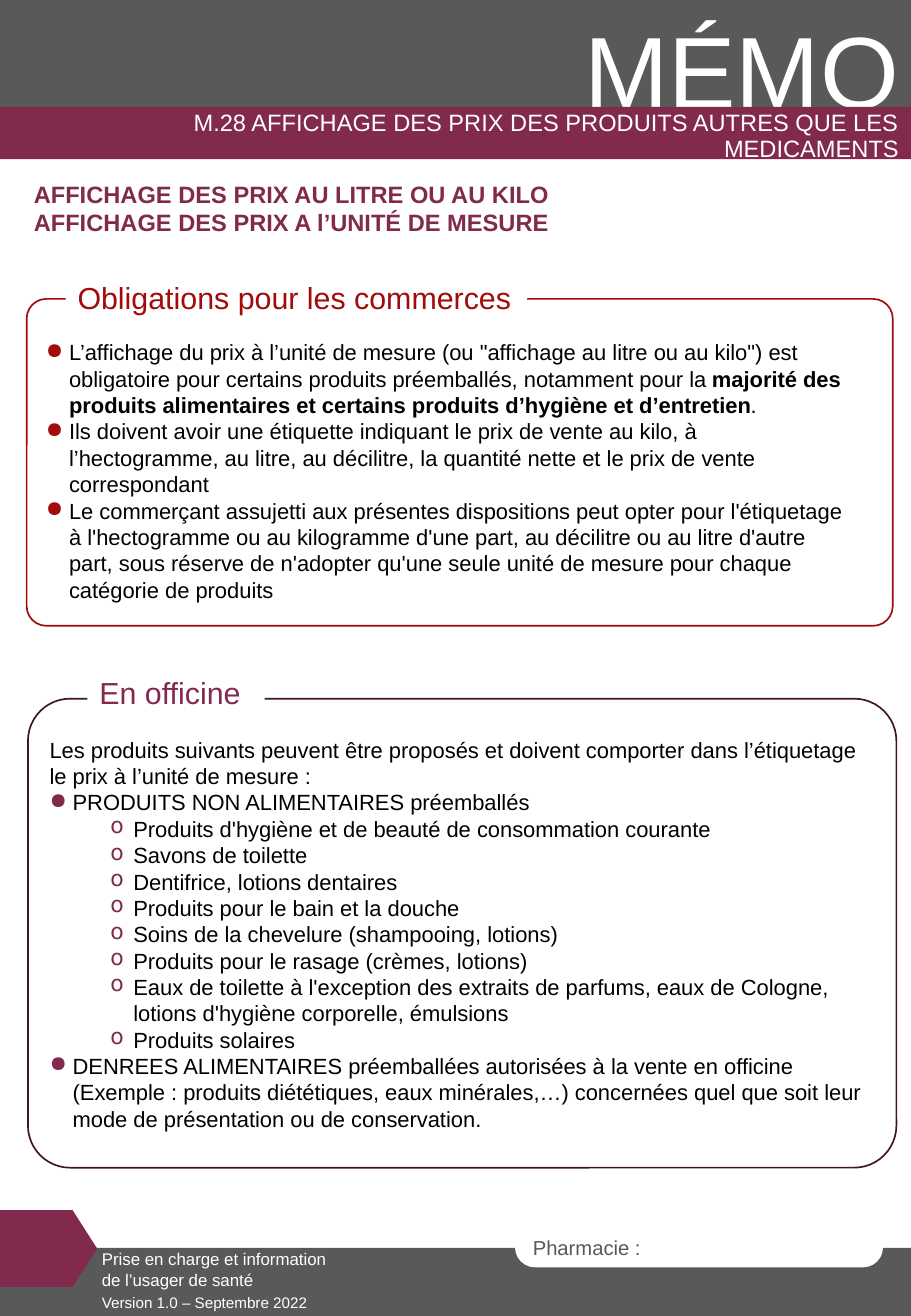
from lxml import etree
from pptx import Presentation, util as u
from pptx.dml.color import RGBColor
from pptx.enum import shapes, text
from pptx.oxml import ns

GRID = u.Inches(0.1)
COLS, ROWS = 75, 108.3
GREY = RGBColor(0x59, 0x59, 0x59)
PLUM = RGBColor(0x81, 0x2A, 0x4D)
DARK_PLUM = RGBColor(0x40, 0x15, 0x27)
RED = RGBColor(0xA1, 0x0B, 0x0B)
WHITE = RGBColor(0xFF, 0xFF, 0xFF)
BLACK = RGBColor(0, 0, 0)
KIND = shapes.MSO_SHAPE
RIGHT = text.PP_ALIGN.RIGHT
MIDDLE = text.MSO_ANCHOR.MIDDLE

TITLES = ["AFFICHAGE DES PRIX AU LITRE OU AU KILO",
          "AFFICHAGE DES PRIX A l’UNITÉ DE MESURE"]
DUTIES = [
    "L’affichage du prix à l’unité de mesure (ou \"affichage au litre ou au kilo\") est "
    "obligatoire pour certains produits préemballés, notamment pour la **majorité des "
    "produits alimentaires et certains produits d’hygiène et d’entretien**.",
    "Ils doivent avoir une étiquette indiquant le prix de vente au kilo, à l’hectogramme, "
    "au litre, au décilitre, la quantité nette et le prix de vente correspondant",
    "Le commerçant assujetti aux présentes dispositions peut opter pour l'étiquetage à "
    "l'hectogramme ou au kilogramme d'une part, au décilitre ou au litre d'autre part, sous "
    "réserve de n'adopter qu'une seule unité de mesure pour chaque catégorie de produits",
]
INTRO = ("Les produits suivants peuvent être proposés et doivent comporter dans l’étiquetage "
         "le prix à l’unité de mesure :")
NON_FOOD = "PRODUITS NON ALIMENTAIRES préemballés"
PRODUCTS = [
    "Produits d'hygiène et de beauté de consommation courante",
    "Savons de toilette",
    "Dentifrice, lotions dentaires",
    "Produits pour le bain et la douche",
    "Soins de la chevelure (shampooing, lotions)",
    "Produits pour le rasage (crèmes, lotions)",
    "Eaux de toilette à l'exception des extraits de parfums, eaux de Cologne, lotions "
    "d'hygiène corporelle, émulsions",
    "Produits solaires",
]
FOOD = ("DENREES ALIMENTAIRES préemballées autorisées à la vente en officine (Exemple : "
        "produits diététiques, eaux minérales,…) concernées quel que soit leur mode de "
        "présentation ou de conservation.")


def place(*cells):
    """Turn left, top, width and height in grid cells into lengths."""
    return [round(n * GRID) for n in cells]


def add_bullet(p, level, color):
    """Give a paragraph a hanging bullet for its level."""
    p.level = level
    pPr = p._p.get_or_add_pPr()
    pPr.set("marL", str(u.Inches(0.19 + 0.5 * level)))
    pPr.set("indent", str(u.Inches(-0.19)))
    clr = etree.SubElement(pPr, ns.qn("a:buClr"))
    etree.SubElement(clr, ns.qn("a:srgbClr"), val=str(color))
    etree.SubElement(pPr, ns.qn("a:buChar"), char="●o"[level])


def write(sp, paragraphs, size=13, color=BLACK, bold=False, align=text.PP_ALIGN.LEFT,
          anchor=text.MSO_ANCHOR.TOP, spacing=None, bullet=None, wrap=True, grow=True):
    """Fill a shape with (text, level) pairs, where ** switches bold and level None is plain."""
    tf = sp.text_frame
    tf.word_wrap = wrap
    tf.vertical_anchor = anchor
    fit = text.MSO_AUTO_SIZE
    tf.auto_size = fit.SHAPE_TO_FIT_TEXT if grow else fit.NONE
    for i, (line, level) in enumerate(paragraphs):
        p = tf.add_paragraph() if i else tf.paragraphs[0]
        p.alignment = align
        if spacing:
            p.line_spacing = spacing
        if level is not None:
            add_bullet(p, level, bullet)
        for k, part in enumerate(line.split("**")):
            r = p.add_run()
            r.text = part
            r.font.name = "Arial"
            r.font.size = u.Pt(size)
            r.font.bold = bold or k % 2 == 1
            r.font.color.rgb = color


def add_text(s, at, lines, level=None, **fmt):
    """Add a text box whose plain lines share one level."""
    sp = s.shapes.add_textbox(*place(*at))
    write(sp, [(line, level) for line in lines], **fmt)


def add_block(s, at, kind=KIND.RECTANGLE, fill=None, line=None, adj=None):
    """Add a flat shape with an optional fill, outline and adjustment."""
    sp = s.shapes.add_shape(kind, *place(*at))
    sp.shadow.inherit = False
    if adj is not None:
        sp.adjustments[0] = adj
    if fill is None:
        sp.fill.background()
    else:
        sp.fill.solid()
        sp.fill.fore_color.rgb = fill
    if line is None:
        sp.line.fill.background()
    else:
        sp.line.color.rgb = line
        sp.line.width = u.Pt(1)
    return sp


def add_frame(s, at, adj, line, label_at, label, color, wrap):
    """Add a rounded outline with a heading that interrupts its top edge."""
    add_block(s, at, KIND.ROUNDED_RECTANGLE, line=line, adj=adj)
    sp = add_block(s, label_at, fill=WHITE)
    write(sp, [(label, None)], size=18, color=color, wrap=wrap)


def add_header(s):
    """Draw the top bands and the memo title."""
    add_block(s, (0, 0, COLS, 8.8), fill=GREY)
    add_text(s, (46.3, 0.1, 28.7, 11.1), ["MÉMO"], size=60, color=WHITE,
             align=RIGHT, wrap=False)
    add_block(s, (0, 8.8, COLS, 4.3), fill=PLUM)


def add_footer(s):
    """Draw the bottom band, the pharmacy field and the version."""
    add_block(s, (0, 102.7, COLS, ROWS - 102.7), fill=GREY)
    sp = add_block(s, (42.4, 101, 30.3, 3.3), KIND.ROUNDED_RECTANGLE, WHITE, adj=0.5)
    write(sp, [("Pharmacie :", None)], size=12, color=GREY, anchor=MIDDLE, grow=False)
    add_block(s, (0, 99.6, 8, 6.3), KIND.PENTAGON, PLUM, adj=0.32)
    add_text(s, (7.4, 102.3, 22.3, 4.3),
             ["Prise en charge et information de l’usager de santé"], size=10, color=WHITE)
    add_text(s, (7.4, 105.9, 58.8, 2.5), ["Version 1.0 – Septembre 2022"],
             size=9, color=WHITE)


def main():
    """Build the memo slide and save it."""
    prs = Presentation()
    prs.slide_width, prs.slide_height = place(COLS, ROWS)
    s = prs.slides.add_slide(prs.slide_layouts[6])
    add_header(s)
    add_footer(s)
    add_text(s, (2.4, 8.6, 72.6, 5.3),
             ["M.28 AFFICHAGE DES PRIX DES PRODUITS AUTRES QUE LES MEDICAMENTS"],
             size=14, color=WHITE, align=RIGHT, anchor=MIDDLE, spacing=0.9)
    add_text(s, (1.8, 14.3, 44.8, 5.7), TITLES, size=14, color=PLUM, bold=True, wrap=False)
    add_frame(s, (2.2, 24.6, 71.3, 26.9), 0.06, RED, (5.4, 22.5, 38, 4),
              "Obligations pour les commerces", RED, wrap=False)
    add_text(s, (2.8, 27.4, 67.9, 22.9), DUTIES, level=0, bullet=RED)
    add_frame(s, (2.3, 57.5, 71.5, 38.6), 0.09, DARK_PLUM, (7.2, 55, 14.6, 4),
              "En officine", PLUM, wrap=True)
    sp = s.shapes.add_textbox(*place(3.1, 60.1, 70, 33.8))
    products = [(product, 1) for product in PRODUCTS]
    write(sp, [(INTRO, None), (NON_FOOD, 0), *products, (FOOD, 0)], bullet=PLUM)
    prs.save("out.pptx")


if __name__ == "__main__":
    main()
